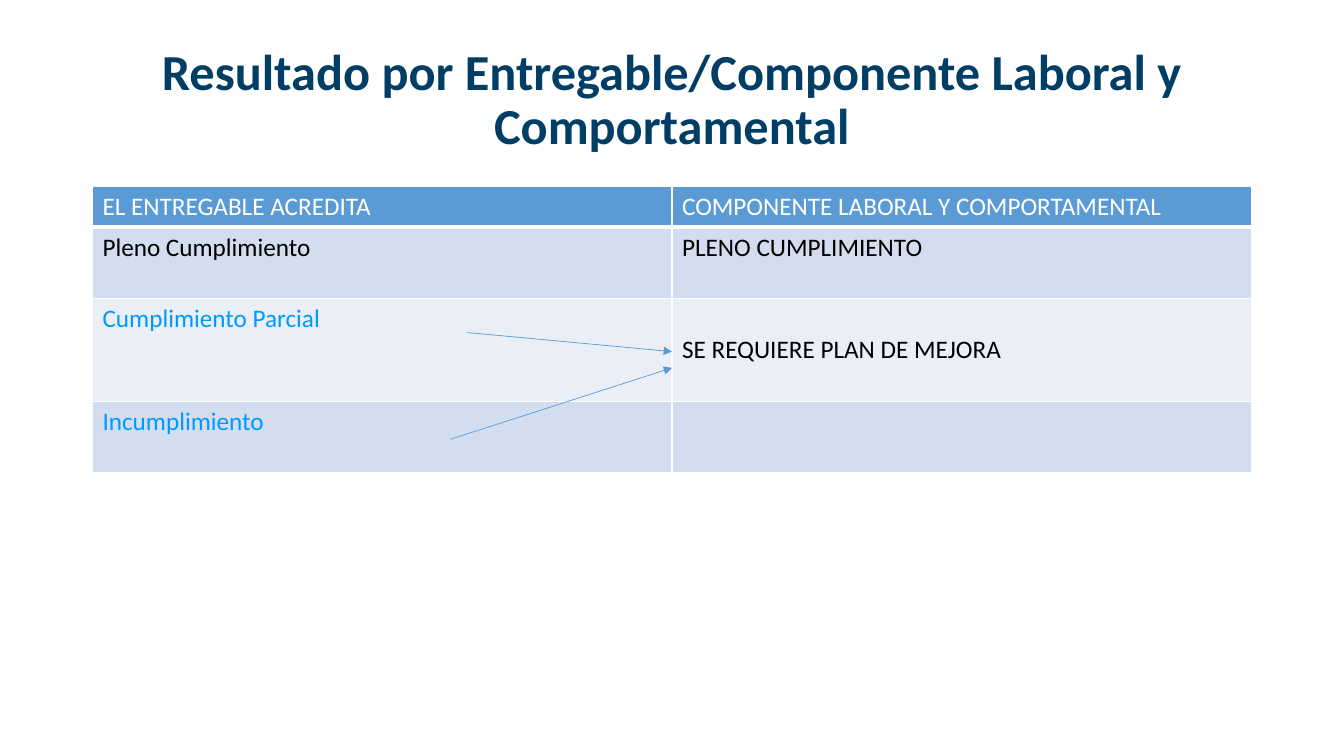
from dataclasses import dataclass

from lxml import etree
from pptx import Presentation
from pptx import util as u
from pptx.dml.color import RGBColor
from pptx.enum import shapes, text
from pptx.oxml import ns


@dataclass(frozen=True)
class Theme:
    font: str = "Calibri"
    title_size: int = 36
    body_size: int = 18
    title: str = "003E65"
    accent: str = "5B9BD5"
    highlight: str = "0099FF"
    band_dark: str = "D2DEEF"
    band_light: str = "EAEFF7"
    white: str = "FFFFFF"
    black: str = "000000"


THEME = Theme()
ROW_HEIGHTS = (1.02, 1.81, 2.58, 1.81)
RESULTS = (
    ("EL ENTREGABLE ACREDITA", "COMPONENTE LABORAL Y COMPORTAMENTAL"),
    ("Pleno Cumplimiento", "PLENO CUMPLIMIENTO"),
    ("Cumplimiento Parcial", "SE REQUIERE PLAN DE MEJORA"),
    ("Incumplimiento", ""),
)
ROW_FILLS = (THEME.accent, THEME.band_dark, THEME.band_light, THEME.band_dark)
ROW_INKS = (
    (THEME.white, THEME.white),
    (THEME.black, THEME.black),
    (THEME.highlight, THEME.black),
    (THEME.highlight, THEME.black),
)


def add_run(paragraph, wording, size, color, bold=False):
    run = paragraph.add_run()
    run.text = wording
    run.font.name = THEME.font
    run.font.size = u.Pt(size)
    run.font.bold = bold
    run.font.color.rgb = RGBColor.from_string(color)


def add_title(slide, left, top, width, height):
    title = slide.shapes.add_textbox(u.Cm(left), u.Cm(top), u.Cm(width), u.Cm(height))
    frame = title.text_frame
    frame.word_wrap = True
    frame.vertical_anchor = text.MSO_ANCHOR.MIDDLE
    heading = frame.paragraphs[0]
    heading.alignment = text.PP_ALIGN.CENTER
    heading.line_spacing = 0.9
    add_run(heading, "Resultado por Entregable/Componente Laboral y Comportamental",
            THEME.title_size, THEME.title, bold=True)


def set_borders(cell, bottom_width):
    properties = cell._tc.get_or_add_tcPr()
    for side, width in (("L", 1), ("R", 1), ("T", 1), ("B", bottom_width)):
        border = etree.SubElement(properties, ns.qn(f"a:ln{side}"), w=str(u.Pt(width)))
        fill = etree.SubElement(border, ns.qn("a:solidFill"))
        etree.SubElement(fill, ns.qn("a:srgbClr"), val=THEME.white)


def add_results_table(slide, left, top, width):
    table = slide.shapes.add_table(
        len(RESULTS), 2, u.Cm(left), u.Cm(top), u.Cm(width), u.Cm(sum(ROW_HEIGHTS))
    ).table
    table.first_row = table.horz_banding = False
    for column in table.columns:
        column.width = u.Cm(width / 2)
    for r, wordings in enumerate(RESULTS):
        table.rows[r].height = u.Cm(ROW_HEIGHTS[r])
        for c, wording in enumerate(wordings):
            cell = table.cell(r, c)
            set_borders(cell, bottom_width=3 if r == 0 else 1)
            cell.fill.solid()
            cell.fill.fore_color.rgb = RGBColor.from_string(ROW_FILLS[r])
            if wording:
                add_run(cell.text_frame.paragraphs[0], wording,
                        THEME.body_size, ROW_INKS[r][c])
    table.cell(2, 1).vertical_anchor = text.MSO_ANCHOR.MIDDLE


def add_arrow(slide, start, end):
    arrow = slide.shapes.add_connector(
        shapes.MSO_CONNECTOR.STRAIGHT, *(u.Cm(value) for value in (*start, *end)))
    arrow.line.color.rgb = RGBColor.from_string(THEME.accent)
    arrow.line.width = u.Pt(0.5)
    etree.SubElement(arrow.line._get_or_add_ln(), ns.qn("a:tailEnd"), type="triangle")
    etree.SubElement(arrow._element.spPr, ns.qn("a:effectLst"))


def add_plan_arrows(slide, left, top, width):
    """Lead partial and missed compliance to the improvement plan."""
    middle = left + width / 2
    add_arrow(slide, (left + 9.45, top + 3.68), (middle, top + 4.16))
    add_arrow(slide, (left + 9.02, top + 6.37), (middle, top + 4.57))


def main():
    deck = Presentation()
    deck.slide_width, deck.slide_height = u.Cm(33.87), u.Cm(19.05)
    slide = deck.slides.add_slide(deck.slide_layouts[6])
    add_title(slide, 2.33, 0.71, 29.21, 3.68)
    left, top, width = 2.33, 4.7, 29.21
    add_results_table(slide, left, top, width)
    add_plan_arrows(slide, left, top, width)
    deck.save("out.pptx")


if __name__ == "__main__":
    main()
